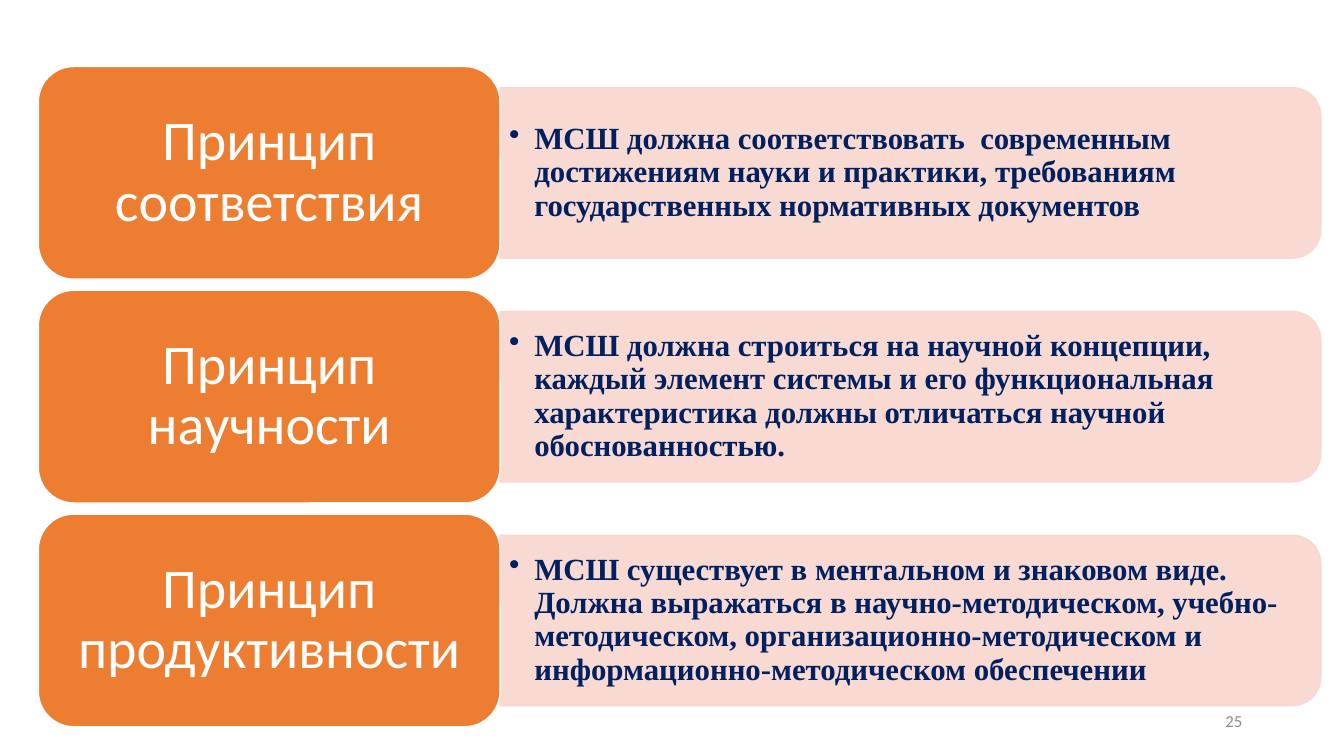
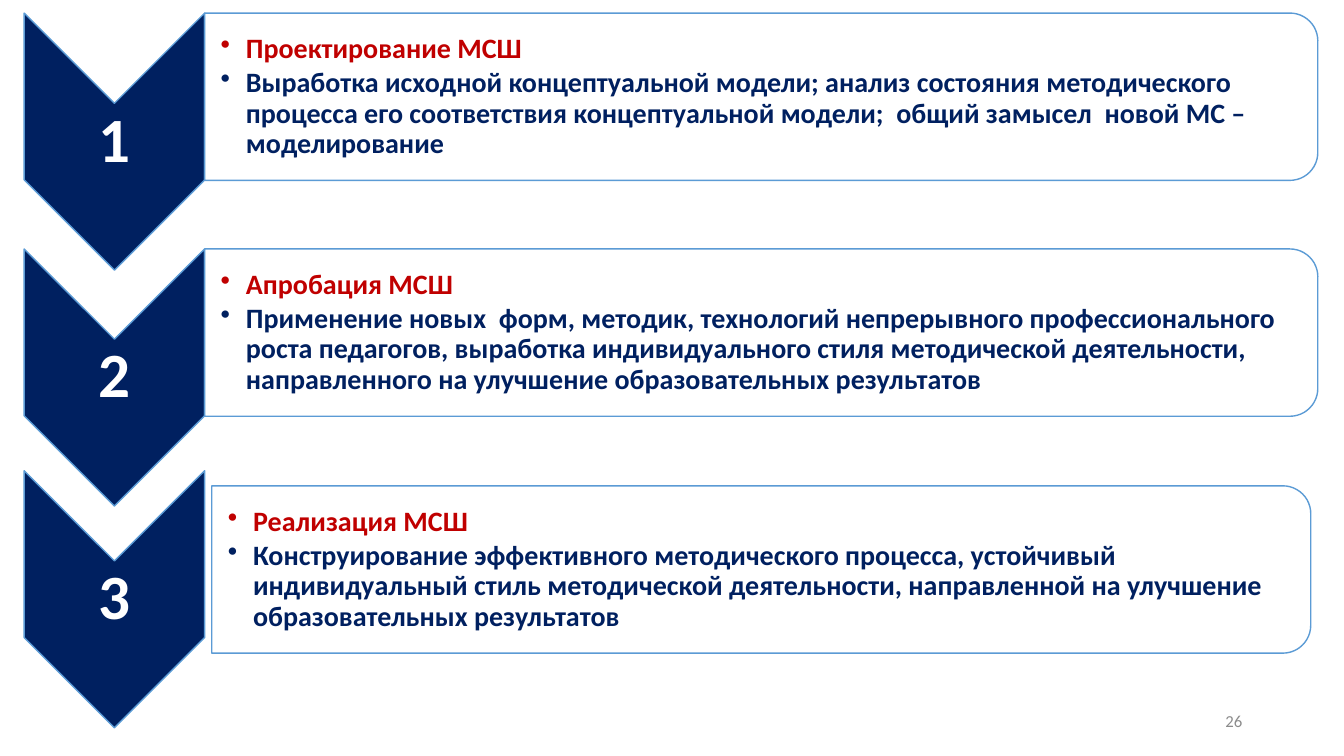
"""Build two slides on the principles and the development stages of a school methodical system."""
from dataclasses import dataclass
from typing import Optional

from lxml.etree import SubElement
from pptx import Presentation
from pptx.dml.color import RGBColor
from pptx.enum.shapes import MSO_SHAPE as Preset
from pptx.enum.text import MSO_ANCHOR as Anchor, PP_ALIGN as Align
from pptx.oxml.ns import qn
from pptx.shapes.autoshape import Shape
from pptx.slide import Slide
from pptx.text.text import TextFrame, _Paragraph as Paragraph
from pptx.util import Inches, Pt


@dataclass(frozen=True)
class Theme:
    navy: str = "002060"
    red: str = "C00000"
    orange: str = "ED7D31"
    peach: str = "F8D7CE"
    blue: str = "5B9BD5"
    white: str = "FFFFFF"
    grey: str = "8C8C8C"
    sans: str = "Calibri"
    serif: str = "Times New Roman"
    principle_size: int = 40
    thesis_size: int = 22
    number_size: int = 45
    stage_size: int = 20
    page_size: int = 12
    panel_opacity: int = 90


@dataclass(frozen=True)
class Box:
    left: float
    top: float
    width: float
    height: float

    def lengths(self) -> tuple[Inches, Inches, Inches, Inches]:
        return Inches(self.left), Inches(self.top), Inches(self.width), Inches(self.height)

    def inset(self, gap: float) -> "Box":
        return Box(self.left, self.top + gap, self.width - gap, self.height - 2 * gap)

    def before_quarter_turn(self) -> "Box":
        shift = (self.width - self.height) / 2
        return Box(self.left + shift, self.top - shift, self.height, self.width)


@dataclass(frozen=True)
class Style:
    size: int
    color: str
    font: str = "Calibri"
    bold: bool = False
    align: Align = Align.LEFT
    spacing: Optional[float] = 0.9


@dataclass(frozen=True)
class Principle:
    name: str
    thesis: str


@dataclass(frozen=True)
class Stage:
    name: str
    content: str
    arrow_top: float
    panel: Box


THEME = Theme()
PRINCIPLE = Style(THEME.principle_size, THEME.white, align=Align.CENTER)
THESIS = Style(THEME.thesis_size, THEME.navy, THEME.serif, bold=True)
NUMBER = Style(THEME.number_size, THEME.white, bold=True, align=Align.CENTER)
STAGE_NAME = Style(THEME.stage_size, THEME.red, bold=True)
STAGE_CONTENT = Style(THEME.stage_size, THEME.navy, bold=True)
PAGE = Style(THEME.page_size, THEME.grey, align=Align.RIGHT, spacing=None)

PAGE_BOX = Box(9.42, 6.95, 3, 0.4)
PRINCIPLE_PITCH = 2.22
PANEL_GAP = 0.08
ARROW_LEFT, ARROW_WIDTH, ARROW_HEIGHT = 0.24, 1.79, 2.55

PRINCIPLES = (
    Principle(
        "Принцип соответствия",
        "МСШ должна соответствовать  современным достижениям науки и практики, "
        "требованиям государственных нормативных документов",
    ),
    Principle(
        "Принцип научности",
        "МСШ должна строиться на научной концепции, каждый элемент системы и его "
        "функциональная характеристика должны отличаться научной обоснованностью.",
    ),
    Principle(
        "Принцип продуктивности",
        "МСШ существует в ментальном и знаковом виде. Должна выражаться в "
        "научно-методическом, учебно-методическом, организационно-методическом и "
        "информационно-методическом обеспечении",
    ),
)

STAGES = (
    Stage(
        "Проектирование МСШ",
        "Выработка исходной концептуальной модели; анализ состояния методического "
        "процесса его соответствия концептуальной модели;  общий замысел  новой МС – "
        "моделирование",
        0.13,
        Box(2.03, 0.13, 11.04, 1.66),
    ),
    Stage(
        "Апробация МСШ",
        "Применение новых  форм, методик, технологий непрерывного профессионального "
        "роста педагогов, выработка индивидуального стиля методической деятельности, "
        "направленного на улучшение образовательных результатов",
        2.47,
        Box(2.03, 2.47, 11.04, 1.66),
    ),
    Stage(
        "Реализация МСШ",
        "Конструирование эффективного методического процесса, устойчивый "
        "индивидуальный стиль методической деятельности, направленной на улучшение "
        "образовательных результатов",
        4.67,
        Box(2.1, 4.82, 10.9, 1.66),
    ),
)


def add_block(slide: Slide, preset: Preset, box: Box, fill: str, line: str) -> Shape:
    block = slide.shapes.add_shape(preset, *box.lengths())
    block.shadow.inherit = False
    block.fill.solid()
    block.fill.fore_color.rgb = RGBColor.from_string(fill)
    block.line.color.rgb = RGBColor.from_string(line)
    block.line.width = Pt(1)
    return block


def add_turned_block(slide: Slide, preset: Preset, box: Box, fill: str, line: str) -> Shape:
    block = add_block(slide, preset, box.before_quarter_turn(), fill, line)
    block.rotation = 90
    return block


def prepare_frame(frame: TextFrame, side: float, edge: float) -> TextFrame:
    frame.word_wrap = True
    frame.vertical_anchor = Anchor.MIDDLE
    frame.margin_left = frame.margin_right = Inches(side)
    frame.margin_top = frame.margin_bottom = Inches(edge)
    return frame


def add_frame(slide: Slide, box: Box, side: float = 0.1, edge: float = 0.05) -> TextFrame:
    return prepare_frame(slide.shapes.add_textbox(*box.lengths()).text_frame, side, edge)


def write(paragraph: Paragraph, text: str, style: Style) -> None:
    paragraph.text = text
    paragraph.alignment = style.align
    paragraph.line_spacing = style.spacing
    font = paragraph.font
    font.size = Pt(style.size)
    font.name = style.font
    font.bold = style.bold
    font.color.rgb = RGBColor.from_string(style.color)


def write_bullets(frame: TextFrame, items: list[tuple[str, Style]]) -> None:
    for index, (text, style) in enumerate(items):
        paragraph = frame.add_paragraph() if index else frame.paragraphs[0]
        write(paragraph, text, style)
        paragraph.level = 1
        paragraph.space_after = Pt(3)
        properties = paragraph._p.get_or_add_pPr()
        properties.set("marL", str(Inches(0.25)))
        properties.set("indent", str(Inches(-0.25)))
        bullet = properties.makeelement(qn("a:buChar"), {"char": "•"})
        properties.insert_element_before(bullet, "a:tabLst", "a:defRPr", "a:extLst")


def add_panel(slide: Slide, box: Box, fill: str, line: str) -> Shape:
    panel = add_turned_block(slide, Preset.ROUND_2_SAME_RECTANGLE, box, fill, line)
    color = panel._element.spPr.find(qn("a:solidFill")).find(qn("a:srgbClr"))
    SubElement(color, qn("a:alpha"), val=str(THEME.panel_opacity * 1000))
    return panel


def add_principle(slide: Slide, row: int, principle: Principle) -> None:
    offset = row * PRINCIPLE_PITCH
    panel_box = Box(4.96, 0.87 + offset, 8.14, 1.69)
    add_panel(slide, panel_box, THEME.peach, THEME.peach)
    thesis = add_frame(slide, panel_box.inset(PANEL_GAP), 0.09)
    write_bullets(thesis, [(principle.thesis, THESIS)])
    heading = add_block(slide, Preset.ROUNDED_RECTANGLE, Box(0.38, 0.66 + offset, 4.58, 2.11),
                        THEME.orange, THEME.white)
    name = prepare_frame(heading.text_frame, 0.17, 0.08)
    write(name.paragraphs[0], principle.name, PRINCIPLE)


def add_stage(slide: Slide, number: int, stage: Stage) -> None:
    arrow_box = Box(ARROW_LEFT, stage.arrow_top, ARROW_WIDTH, ARROW_HEIGHT)
    add_turned_block(slide, Preset.CHEVRON, arrow_box, THEME.navy, THEME.blue)
    number_box = Box(ARROW_LEFT, stage.arrow_top + 0.89, ARROW_WIDTH, 0.77)
    write(add_frame(slide, number_box, 0.03, 0.03).paragraphs[0], str(number), NUMBER)
    add_panel(slide, stage.panel, THEME.white, THEME.blue)
    description = add_frame(slide, stage.panel.inset(PANEL_GAP), 0.01, 0.01)
    description.margin_left = Inches(0.16)
    write_bullets(description, [(stage.name, STAGE_NAME), (stage.content, STAGE_CONTENT)])


def add_page(slide: Slide, number: int) -> None:
    write(add_frame(slide, PAGE_BOX).paragraphs[0], str(number), PAGE)


def main() -> None:
    deck = Presentation()
    deck.slide_width, deck.slide_height = Inches(13.33), Inches(7.5)
    blank = deck.slide_layouts[6]

    principles_slide = deck.slides.add_slide(blank)
    for row, principle in enumerate(PRINCIPLES):
        add_principle(principles_slide, row, principle)

    stages_slide = deck.slides.add_slide(blank)
    for number, stage in enumerate(STAGES, start=1):
        add_stage(stages_slide, number, stage)

    for number, slide in enumerate(deck.slides, start=25):
        add_page(slide, number)
    deck.save("out.pptx")


if __name__ == "__main__":
    main()
